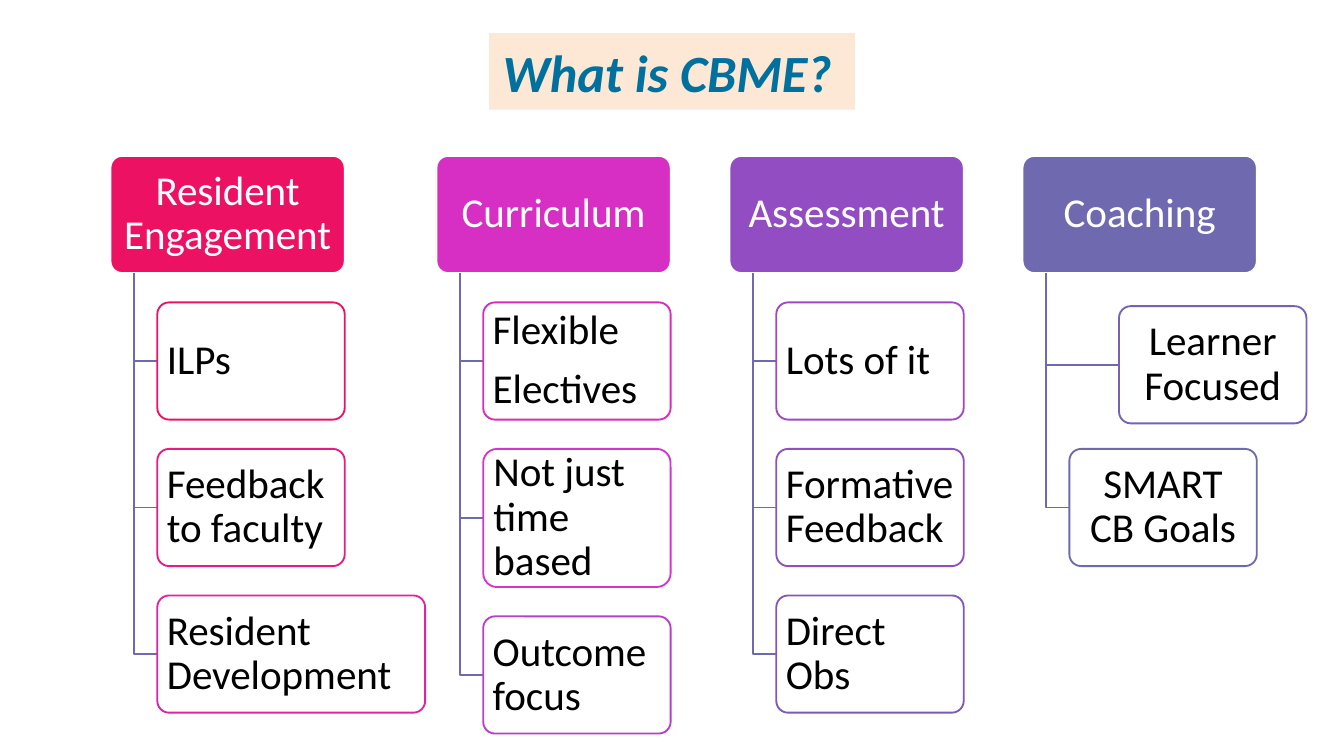
import pptx
import pptx.util
import pptx.dml.color
import pptx.enum.shapes
import pptx.enum.text

Pt = pptx.util.Pt
RGBColor = pptx.dml.color.RGBColor
LEFT = pptx.enum.text.PP_ALIGN.LEFT
CENTER = pptx.enum.text.PP_ALIGN.CENTER
MIDDLE = pptx.enum.text.MSO_ANCHOR.MIDDLE

WHITE = RGBColor(0xFF, 0xFF, 0xFF)
BLACK = RGBColor(0x00, 0x00, 0x00)
PEACH = RGBColor(0xFC, 0xE8, 0xD5)
TEAL = RGBColor(0x00, 0x70, 0x9E)
CRIMSON = RGBColor(0xED, 0x11, 0x63)
ROSE = RGBColor(0xE7, 0x1A, 0x86)
PINK = RGBColor(0xE0, 0x23, 0xA4)
MAGENTA = RGBColor(0xD7, 0x2F, 0xC4)
FUCHSIA = RGBColor(0xD9, 0x2C, 0xBD)
ORCHID = RGBColor(0xD3, 0x35, 0xD1)
VIOLET = RGBColor(0xB8, 0x3E, 0xCD)
PURPLE = RGBColor(0x93, 0x4D, 0xC2)
AMETHYST = RGBColor(0xA1, 0x47, 0xC6)
GRAPE = RGBColor(0x8E, 0x50, 0xC0)
IRIS = RGBColor(0x7F, 0x58, 0xBA)
LAVENDER = RGBColor(0x75, 0x61, 0xB5)
SLATE = RGBColor(0x6F, 0x69, 0xAF)

HEAD_TOP, HEAD_WIDTH, BOX_HEIGHT = 83.5, 125.5, 62.8
HEAD_BOTTOM = HEAD_TOP + BOX_HEIGHT
GAP = BOX_HEIGHT / 4
STEM = HEAD_WIDTH / 10
INDENT, ITEM_WIDTH = 2 * STEM, 0.8 * HEAD_WIDTH

prs = pptx.Presentation()
prs.slide_width, prs.slide_height = Pt(720), Pt(405)
slide = prs.slides.add_slide(prs.slide_layouts[5])

title = slide.shapes.title
title.left, title.top, title.width, title.height = Pt(262), Pt(17.8), Pt(196), Pt(41)
title.fill.solid()
title.fill.fore_color.rgb = PEACH
title.text_frame.text = "What is CBME?"
title.text_frame.auto_size = pptx.enum.text.MSO_AUTO_SIZE.NONE
heading = title.text_frame.paragraphs[0]
heading.alignment = LEFT
heading.font.name, heading.font.size = "Calibri", Pt(28)
heading.font.bold = heading.font.italic = True
heading.font.color.rgb = TEAL


def add_box(text, left, top, width, height, fill, line, color, align):
    box = slide.shapes.add_shape(
        pptx.enum.shapes.MSO_SHAPE.ROUNDED_RECTANGLE,
        Pt(left), Pt(top), Pt(width), Pt(height))
    box.adjustments[0] = 0.1
    box.shadow.inherit = False
    box.fill.solid()
    box.fill.fore_color.rgb = fill
    box.line.color.rgb = line
    box.line.width = Pt(1)
    frame = box.text_frame
    frame.word_wrap = True
    frame.vertical_anchor = MIDDLE
    frame.margin_left = frame.margin_right = Pt(3.3)
    frame.margin_top = frame.margin_bottom = Pt(2)
    frame.text = text
    for paragraph in frame.paragraphs:
        paragraph.alignment = align
        paragraph.line_spacing = 0.9
        paragraph.space_after = Pt(7.7)
        paragraph.font.name, paragraph.font.size = "Calibri", Pt(22)
        paragraph.font.color.rgb = color


def add_branch(x, end_x, end_y):
    builder = slide.shapes.build_freeform(Pt(x), Pt(HEAD_BOTTOM))
    builder.add_line_segments([(Pt(x), Pt(end_y)), (Pt(end_x), Pt(end_y))], close=False)
    branch = builder.convert_to_shape()
    branch.shadow.inherit = False
    branch.fill.background()
    branch.line.color.rgb = SLATE
    branch.line.width = Pt(1)


columns = [
    ("Resident Engagement", 59.2, CRIMSON, LEFT,
     [("ILPs", CRIMSON), ("Feedback to faculty", ROSE), ("Resident Development", PINK)]),
    ("Curriculum", 233.8, MAGENTA, LEFT,
     [("Flexible\nElectives", FUCHSIA), ("Not just time based", ORCHID), ("Outcome focus", VIOLET)]),
    ("Assessment", 390.8, PURPLE, LEFT,
     [("Lots of it", AMETHYST), ("Formative Feedback", GRAPE), ("Direct Obs", IRIS)]),
    ("Coaching", 547.8, SLATE, CENTER,
     [("Learner Focused", LAVENDER), ("SMART CB Goals", SLATE)]),
]
widths = {"Resident Development": 143.5}
heights = {"Not just time based": 74}
shifts = {"Learner Focused": (26.6, 2)}

for name, left, color, align, items in columns:
    add_box(name, left, HEAD_TOP, HEAD_WIDTH, BOX_HEIGHT, color, WHITE, WHITE, CENTER)
    top = HEAD_BOTTOM + GAP
    for text, outline in items:
        dx, dy = shifts.get(text, (0, 0))
        height = heights.get(text, BOX_HEIGHT)
        item_left = left + INDENT + dx
        add_branch(left + STEM, item_left, top + dy + height / 2)
        add_box(text, item_left, top + dy, widths.get(text, ITEM_WIDTH), height,
                WHITE, outline, BLACK, align)
        top += height + GAP

prs.save("out.pptx")
